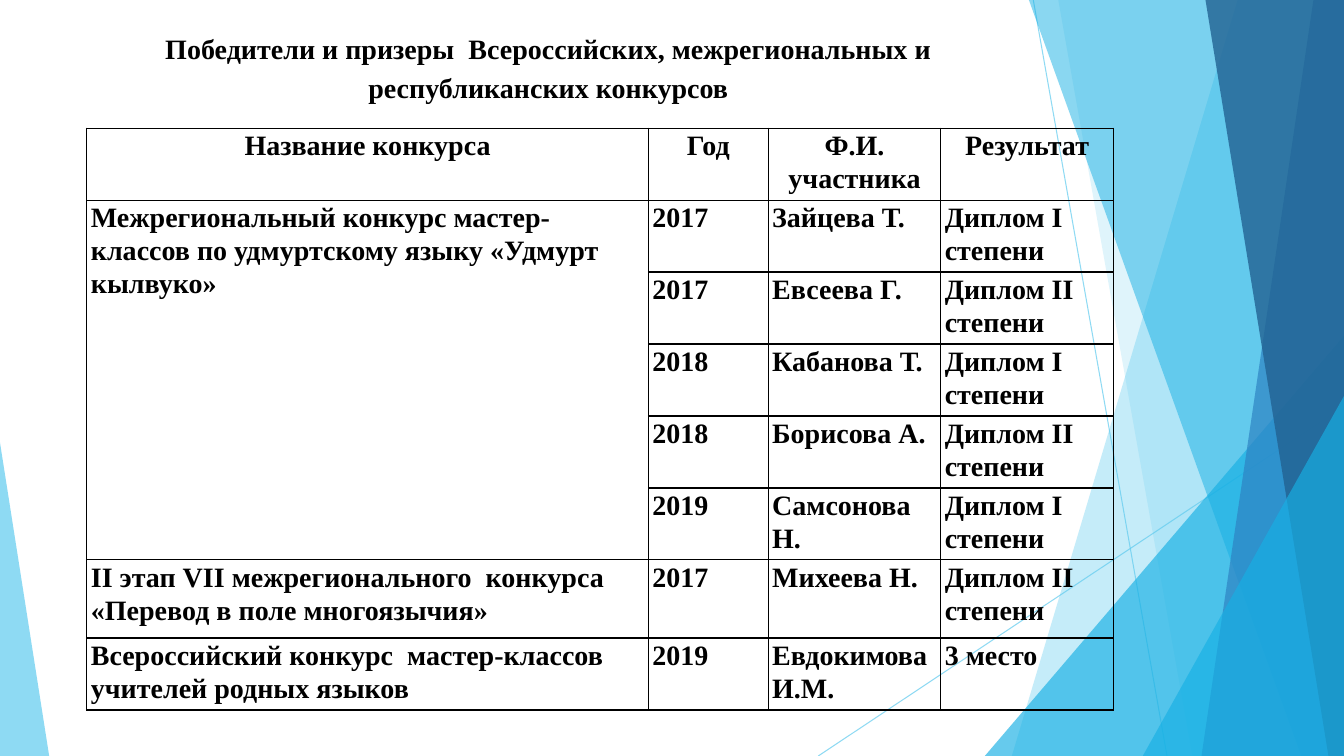
from lxml import etree
from pptx import Presentation
from pptx.dml.color import RGBColor
from pptx.enum.shapes import MSO_CONNECTOR, MSO_SHAPE
from pptx.enum.text import MSO_ANCHOR, PP_ALIGN
from pptx.oxml.ns import qn
from pptx.util import Cm, Pt

STRAIGHT = MSO_CONNECTOR.STRAIGHT
TRIANGLE = MSO_SHAPE.ISOSCELES_TRIANGLE
TOP = MSO_ANCHOR.TOP
LEFT, CENTER = PP_ALIGN.LEFT, PP_ALIGN.CENTER

BLACK = RGBColor(0x00, 0x00, 0x00)
SKY = RGBColor(0x5F, 0xCB, 0xEF)
CYAN = RGBColor(0x17, 0xB0, 0xE4)
BLUE = RGBColor(0x2E, 0x83, 0xC3)
NAVY = RGBColor(0x22, 0x62, 0x92)

WIDTH, HEIGHT = 33.87, 19.05

TITLE = "Победители и призеры  Всероссийских, межрегиональных и республиканских конкурсов"
HEADER = ["Название конкурса", "Год", "Ф.И. участника", "Результат"]
CONTESTS = [
    ("Межрегиональный конкурс мастер-классов по удмуртскому языку «Удмурт кылвуко»", [
        ("2017", "Зайцева Т.", "Диплом I степени"),
        ("2017", "Евсеева Г.", "Диплом II степени"),
        ("2018", "Кабанова Т.", "Диплом I степени"),
        ("2018", "Борисова А.", "Диплом II степени"),
        ("2019", "Самсонова Н.", "Диплом I степени")]),
    ("II этап VII межрегионального  конкурса «Перевод в поле многоязычия»", [
        ("2017", "Михеева Н.", "Диплом II степени")]),
    ("Всероссийский конкурс  мастер-классов учителей родных языков", [
        ("2019", "Евдокимова И.М.", "3 место")]),
]
COLUMN_WIDTHS = [14.15, 3.02, 4.35, 4.35]
ROW_HEIGHTS = [1.66, 1.76, 1.71, 1.69, 1.67, 1.69, 1.97, 1.69]

# Bands reaching the right edge: top x, bottom x, colour, opacity in percent
BACK_BANDS = [(31.19, 25.5, SKY, 36), (26.67, 30.05, SKY, 20)]
FRONT_BANDS = [(25.93, 32.79, CYAN, 50), (33.1, 30.28, BLUE, 70), (30.38, 33.48, NAVY, 80)]


def set_opacity(element, percent):
    for color in element.iter(qn("a:srgbClr")):
        etree.SubElement(color, qn("a:alpha"), val=str(percent * 1000))


def write(frame, text, align=LEFT, spacing=1.07, size=20):
    frame.word_wrap = True
    paragraph = frame.paragraphs[0]
    paragraph.alignment = align
    paragraph.line_spacing = spacing
    run = paragraph.add_run()
    run.text = text
    run.font.name = "Times New Roman"
    run.font.size = Pt(size)
    run.font.bold = True
    run.font.color.rgb = BLACK


def outline_cell(cell):
    properties = cell._tc.get_or_add_tcPr()
    for index, side in enumerate(("a:lnL", "a:lnR", "a:lnT", "a:lnB")):
        border = etree.Element(qn(side), w=str(Pt(1)))
        fill = etree.SubElement(border, qn("a:solidFill"))
        etree.SubElement(fill, qn("a:srgbClr"), val=str(BLACK))
        properties.insert(index, border)


class SlideBuilder:
    def __init__(self, slide):
        self.shapes = slide.shapes

    def paint(self, shape, color, opacity):
        shape.shadow.inherit = False
        shape.fill.solid()
        shape.fill.fore_color.rgb = color
        shape.line.fill.background()
        set_opacity(shape._element.spPr, opacity)

    def band(self, top_x, bottom_x, color, opacity):
        """Fill the area between a slanted edge and the slide's right edge."""
        outline = self.shapes.build_freeform(Cm(top_x), 0)
        corners = [(WIDTH, 0), (WIDTH, HEIGHT), (bottom_x, HEIGHT)]
        outline.add_line_segments([(Cm(x), Cm(y)) for x, y in corners])
        self.paint(outline.convert_to_shape(), color, opacity)

    def corner(self, left, width, height, apex, color, opacity):
        """Place a right triangle on the bottom edge; apex is 0 (left) or 1 (right)."""
        triangle = self.shapes.add_shape(
            TRIANGLE, Cm(left), Cm(HEIGHT - height), Cm(width), Cm(height))
        triangle.adjustments[0] = apex
        self.paint(triangle, color, opacity)

    def ray(self, x1, y1, x2, y2):
        ray = self.shapes.add_connector(STRAIGHT, Cm(x1), Cm(y1), Cm(x2), Cm(y2))
        ray.line.color.rgb = SKY
        ray.line.width = Pt(0.75)
        properties = ray._element.spPr
        set_opacity(properties, 70)
        etree.SubElement(properties, qn("a:effectLst"))

    def title(self, text, left, top, width, height):
        frame = self.shapes.add_textbox(Cm(left), Cm(top), Cm(width), Cm(height)).text_frame
        frame.vertical_anchor = TOP
        write(frame, text, align=CENTER, spacing=1.16)

    def results(self, left, top):
        table = self.shapes.add_table(
            len(ROW_HEIGHTS), len(COLUMN_WIDTHS), Cm(left), Cm(top),
            Cm(sum(COLUMN_WIDTHS)), Cm(sum(ROW_HEIGHTS))).table
        table.first_row = table.horz_banding = False
        for column, width in zip(table.columns, COLUMN_WIDTHS):
            column.width = Cm(width)
        for row, height in zip(table.rows, ROW_HEIGHTS):
            row.height = Cm(height)
        for cell in table.iter_cells():
            cell.margin_left = cell.margin_right = Cm(0.1)
            cell.margin_top = cell.margin_bottom = 0
            cell.vertical_anchor = TOP
            cell.fill.background()
            outline_cell(cell)

        for column, label in enumerate(HEADER):
            write(table.cell(0, column).text_frame, label, align=CENTER)
        first = 1
        for contest, winners in CONTESTS:
            last = first + len(winners) - 1
            if last > first:
                table.cell(first, 0).merge(table.cell(last, 0))
            write(table.cell(first, 0).text_frame, contest)
            for row, winner in enumerate(winners, first):
                for column, value in enumerate(winner, 1):
                    write(table.cell(row, column).text_frame, value)
            first = last + 1


def main():
    deck = Presentation()
    deck.slide_width, deck.slide_height = Cm(WIDTH), Cm(HEIGHT)
    builder = SlideBuilder(deck.slides.add_slide(deck.slide_layouts[6]))

    builder.ray(26.04, 0, 29.41, HEIGHT)
    builder.ray(WIDTH, 10.24, 20.62, HEIGHT)
    for band in BACK_BANDS:
        builder.band(*band)
    builder.corner(24.82, 9.05, 10.59, 1, CYAN, 66)
    for band in FRONT_BANDS:
        builder.band(*band)
    builder.corner(28.8, 5.07, 9.07, 1, CYAN, 66)
    builder.corner(0, 1.24, 7.9, 0, SKY, 70)

    builder.title(TITLE, 1.88, 0.53, 23.88, 4.83)
    builder.results(2.19, 3.23)
    deck.save("out.pptx")


if __name__ == "__main__":
    main()
